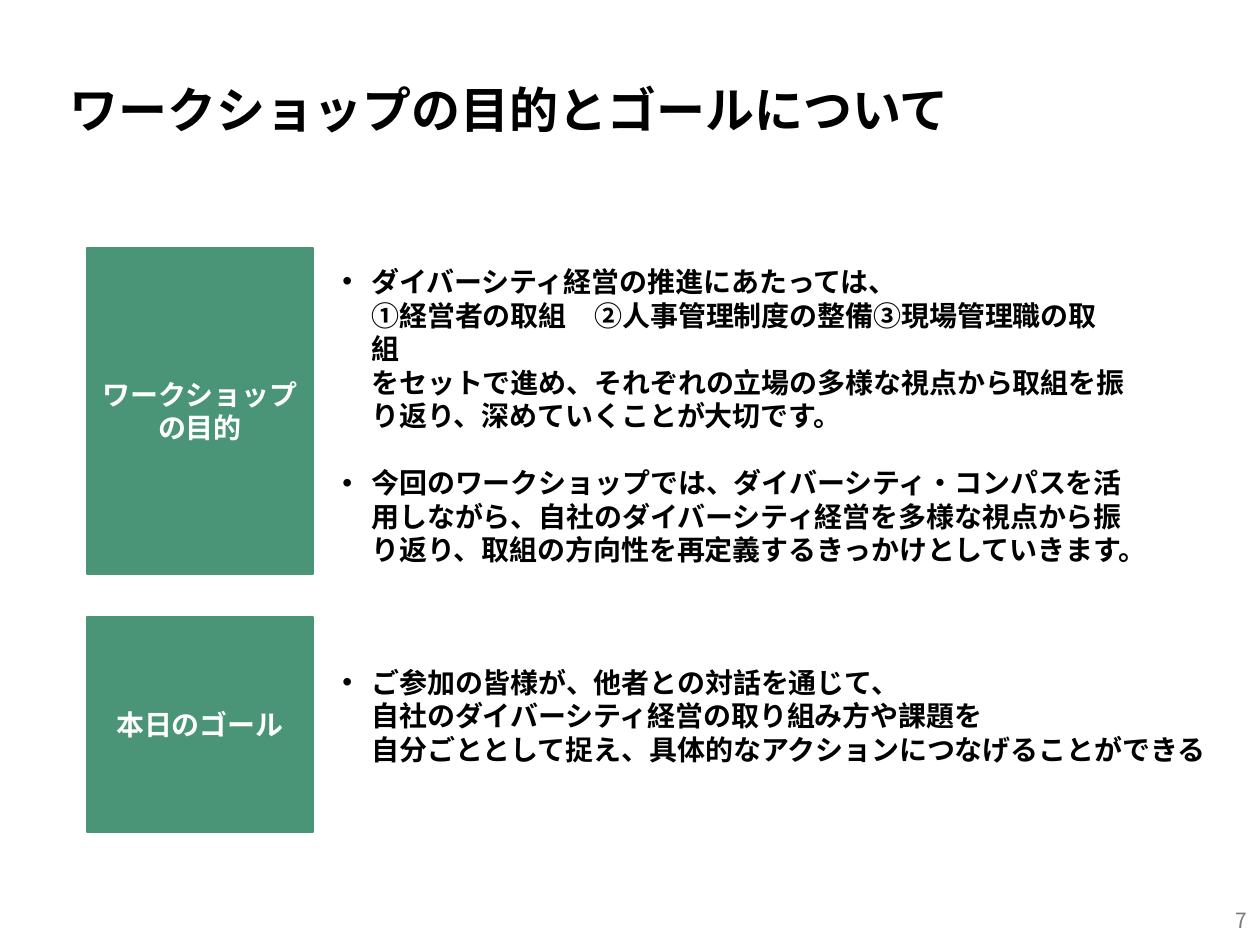
import pptx
import pptx.dml.color
import pptx.enum.shapes
import pptx.enum.text
import pptx.oxml.ns
import pptx.util
from lxml import etree

EMU_PER_PX = 914400 / 126
FONT = "Noto Sans CJK JP"
COLORS = {"text": "000000", "label": "4A9478", "label_text": "FFFFFF", "number": "797979"}
ALIGN = pptx.enum.text.PP_ALIGN
LABEL_LEFT, LABEL_WIDTH = 87, 226
BODY_LEFT = 330
BULLET_INDENT = 29

PURPOSE = [
    [
        "ダイバーシティ経営の推進にあたっては、",
        "①経営者の取組　②人事管理制度の整備③現場管理職の取組　",
        "をセットで進め、それぞれの立場の多様な視点から取組を振り返り、深めていくことが大切です。",
    ],
    [
        "今回のワークショップでは、ダイバーシティ・コンパスを活用しながら、"
        "自社のダイバーシティ経営を多様な視点から振り返り、"
        "取組の方向性を再定義するきっかけとしていきます。",
    ],
]
GOAL = [
    [
        "ご参加の皆様が、他者との対話を通じて、",
        "自社のダイバーシティ経営の取り組み方や課題を",
        "自分ごととして捉え、具体的なアクションにつなげることができる",
    ],
]


def px(value):
    return pptx.util.Emu(round(value * EMU_PER_PX))


def rgb(name):
    return pptx.dml.color.RGBColor.from_string(COLORS[name])


def add_element(parent, tag, **attributes):
    return etree.SubElement(parent, pptx.oxml.ns.qn(tag), attributes)


def style_paragraph(paragraph, size, color, bold=True, align=ALIGN.LEFT):
    paragraph.alignment = align
    font = paragraph.font
    font.size = pptx.util.Pt(size)
    font.bold = bold
    font.color.rgb = rgb(color)
    font.name = FONT
    properties = paragraph._p.get_or_add_pPr().find(pptx.oxml.ns.qn("a:defRPr"))
    add_element(properties, "a:ea", typeface=FONT)


def prepare_frame(shape):
    frame = shape.text_frame
    frame.word_wrap = True
    frame.vertical_anchor = pptx.enum.text.MSO_ANCHOR.MIDDLE
    return frame


def add_text(slide, box, text, size, color, **style):
    shape = slide.shapes.add_textbox(*map(px, box))
    paragraph = prepare_frame(shape).paragraphs[0]
    paragraph.text = text
    style_paragraph(paragraph, size, color, **style)
    return paragraph


def add_label(slide, top, height, text):
    shape = slide.shapes.add_shape(
        pptx.enum.shapes.MSO_SHAPE.RECTANGLE,
        px(LABEL_LEFT), px(top), px(LABEL_WIDTH), px(height),
    )
    shape.shadow.inherit = False
    shape.fill.solid()
    shape.fill.fore_color.rgb = rgb("label")
    shape.line.color.rgb = rgb("label")
    shape.line.width = pptx.util.Pt(0.75)
    paragraph = prepare_frame(shape).paragraphs[0]
    paragraph.text = text
    style_paragraph(paragraph, 16, "label_text", align=ALIGN.CENTER)


def add_bullets(slide, top, width, height, items):
    shape = slide.shapes.add_textbox(px(BODY_LEFT), px(top), px(width), px(height))
    frame = prepare_frame(shape)
    for index, lines in enumerate(items):
        paragraph = frame.add_paragraph() if index else frame.paragraphs[0]
        if index:
            paragraph.space_before = pptx.util.Pt(19)
        properties = paragraph._p.get_or_add_pPr()
        properties.set("marL", str(px(BULLET_INDENT)))
        properties.set("indent", str(-px(BULLET_INDENT)))
        add_element(properties, "a:buFont", typeface="Arial")
        add_element(properties, "a:buChar", char="•")
        for line_index, line in enumerate(lines):
            if line_index:
                paragraph.add_line_break()
            paragraph.add_run().text = line
        style_paragraph(paragraph, 16, "text")


def main():
    presentation = pptx.Presentation()
    presentation.slide_width = px(1260)
    presentation.slide_height = px(945)
    slide = presentation.slides.add_slide(presentation.slide_layouts[6])

    title = add_text(slide, (57, 21, 1086, 183), "ワークショップの目的とゴールについて", 28, "text")
    title.line_spacing = 0.9
    add_label(slide, 248, 326, "ワークショップの目的")
    add_bullets(slide, 273, 833, 285, PURPOSE)
    add_label(slide, 617, 215, "本日のゴール")
    add_bullets(slide, 658, 945, 115, GOAL)
    add_text(slide, (976, 895, 284, 50), "7", 12, "number", bold=False, align=ALIGN.RIGHT)

    presentation.save("out.pptx")


if __name__ == "__main__":
    main()
